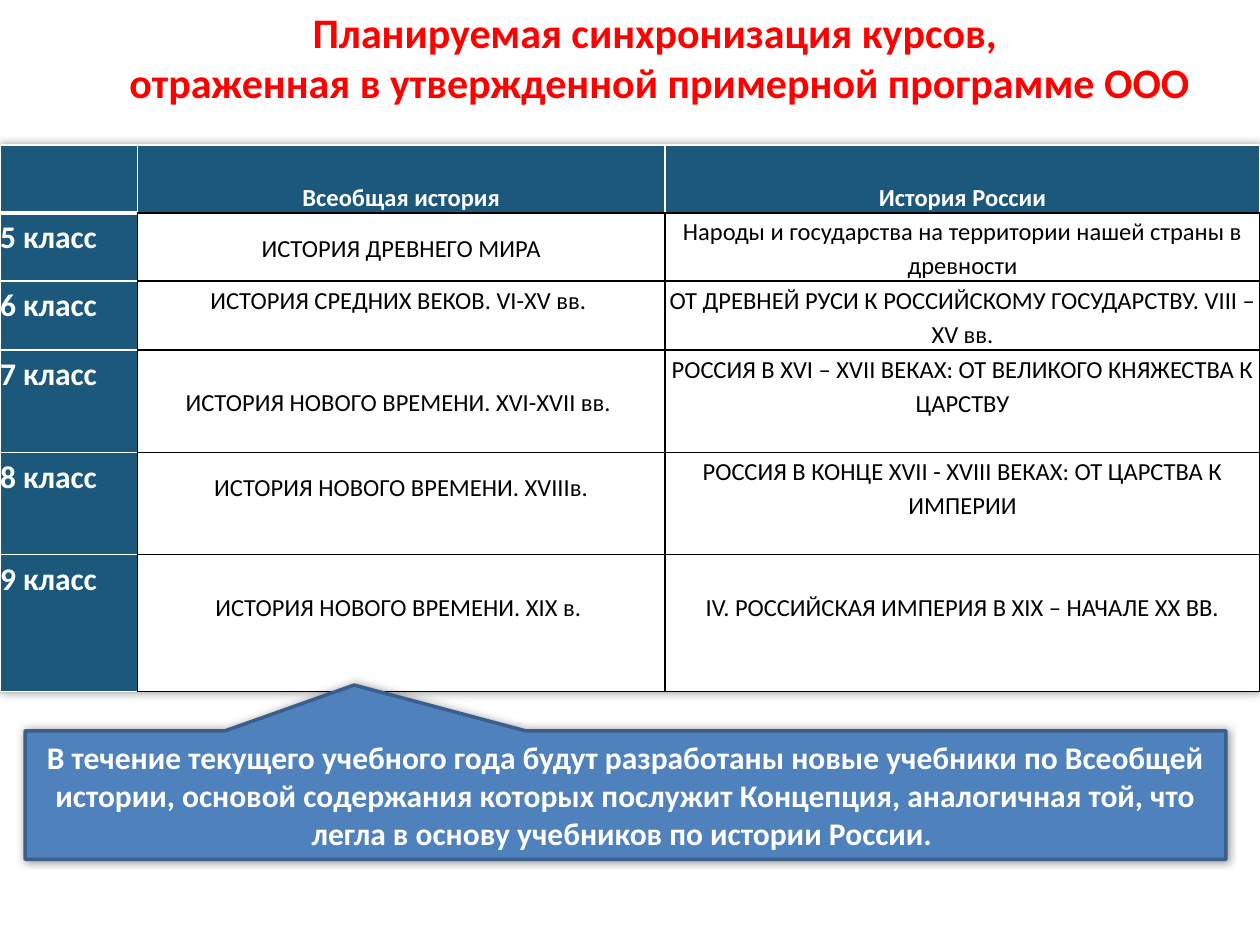
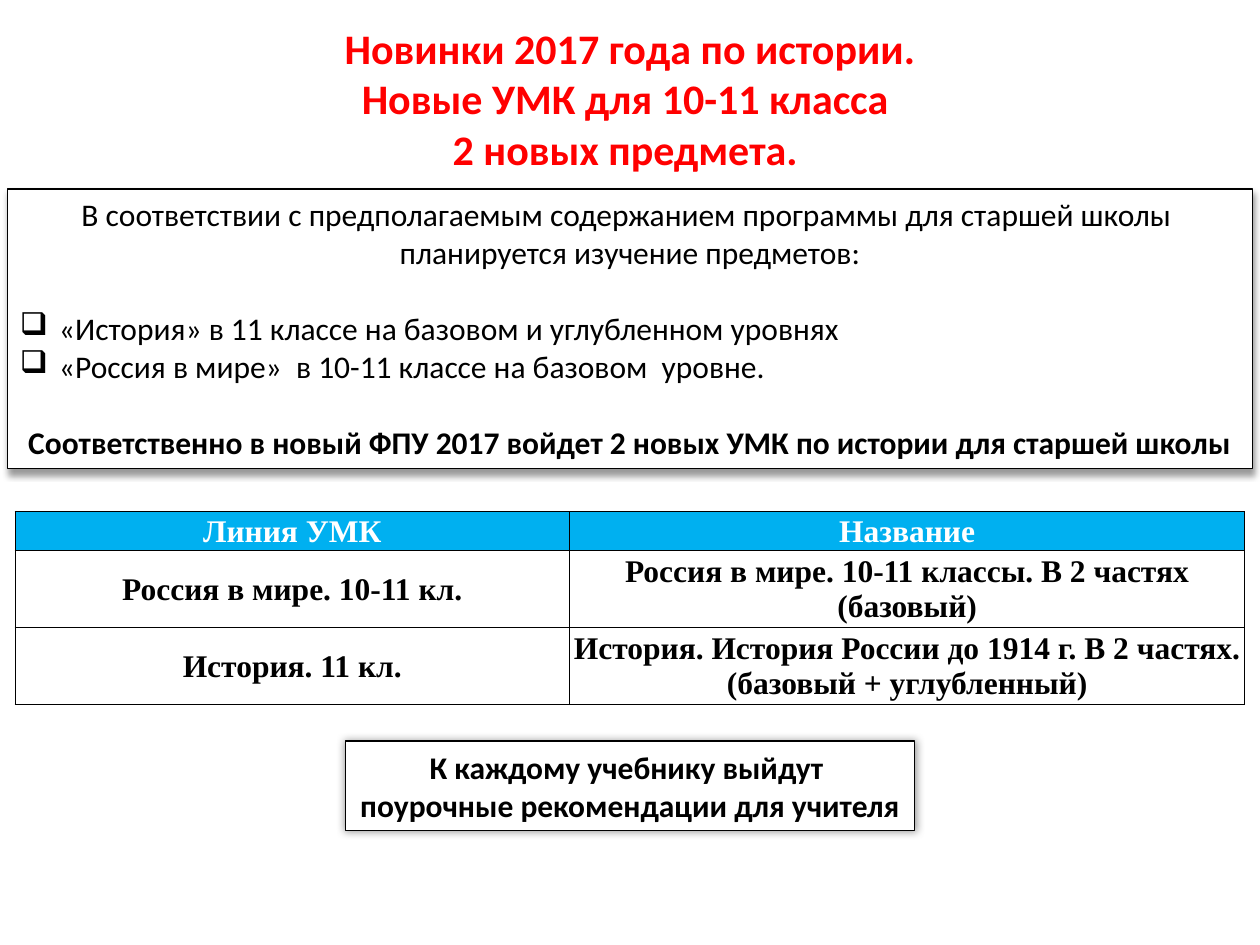
import pptx
import pptx.util
from lxml import etree
from pptx.dml.color import RGBColor
from pptx.enum.shapes import MSO_SHAPE
from pptx.enum.text import MSO_ANCHOR, PP_ALIGN
from pptx.oxml.ns import qn
from pptx.util import Inches, Pt

RED = RGBColor(0xFF, 0x00, 0x00)
BLACK = RGBColor(0x00, 0x00, 0x00)
WHITE = RGBColor(0xFF, 0xFF, 0xFF)
NAVY = RGBColor(0x1B, 0x58, 0x7C)
BLUE = RGBColor(0x4F, 0x81, 0xBD)
BLUE_EDGE = RGBColor(0x3A, 0x5F, 0x8C)
CYAN = RGBColor(0x00, 0xB0, 0xF0)

FONT = "Calibri"
TABLE_FONT = "Times New Roman"
BLANK_LINE_14 = 0.27  # inches taken by one 14 pt line at 1.15 spacing
BLANK_LINE_18 = Pt(22)

# Class, world history, Russian history; True leaves a free line below the text
COURSES = [
    ("5 класс", ("ИСТОРИЯ ДРЕВНЕГО МИРА", False),
     ("Народы и государства на территории нашей страны в древности", False)),
    ("6 класс", ("ИСТОРИЯ СРЕДНИХ ВЕКОВ. VI-XV вв. ", True),
     ("ОТ ДРЕВНЕЙ РУСИ К РОССИЙСКОМУ ГОСУДАРСТВУ. VIII –XV вв.", False)),
    ("7 класс", ("ИСТОРИЯ НОВОГО ВРЕМЕНИ. XVI-XVII вв. ", False),
     ("РОССИЯ В XVI – XVII ВЕКАХ: ОТ ВЕЛИКОГО КНЯЖЕСТВА К ЦАРСТВУ", True)),
    ("8 класс", ("ИСТОРИЯ НОВОГО ВРЕМЕНИ. XVIIIв.", True),
     ("РОССИЯ В КОНЦЕ XVII - XVIII ВЕКАХ: ОТ ЦАРСТВА К ИМПЕРИИ", True)),
    ("9 класс", ("ИСТОРИЯ НОВОГО ВРЕМЕНИ. XIX в. ", True),
     ("IV. РОССИЙСКАЯ ИМПЕРИЯ В XIX – НАЧАЛЕ XX ВВ.", True)),
]
TEXTBOOKS = [
    ("Линия УМК", "Название"),
    ("Россия в мире. 10-11 кл.", "Россия в мире. 10-11 классы. В 2 частях (базовый)"),
    ("История. 11 кл.",
     "История. История России до 1914 г. В 2 частях. (базовый + углубленный)"),
]


def write(tf, lines, size, color, bold=False, align=PP_ALIGN.CENTER, font=FONT, spacing=None):
    """Fill a text frame with one paragraph per line, all in one style."""
    tf.text = "\n".join(lines)
    for p in tf.paragraphs:
        p.alignment = align
        if spacing:
            p.line_spacing = spacing
        for r in p.runs:
            r.font.name, r.font.size, r.font.bold = font, Pt(size), bold
            r.font.color.rgb = color


def add_shadow(properties, index, blur, dist=0, direction=0):
    effects = etree.Element(qn("a:effectLst"))
    shadow = etree.SubElement(effects, qn("a:outerShdw"), blurRad=str(Pt(blur)),
                              dist=str(Pt(dist)), dir=str(direction * 60000),
                              algn="ctr", rotWithShape="0")
    color = etree.SubElement(shadow, qn("a:srgbClr"), val=str(BLACK))
    etree.SubElement(color, qn("a:alpha"), val="40000")
    properties.insert(index, effects)


def set_borders(cell, left, right, top, bottom):
    """Draw the four cell edges, each given as (colour, width in points)."""
    tc_pr = cell._tc.get_or_add_tcPr()
    edges = zip(("lnL", "lnR", "lnT", "lnB"), (left, right, top, bottom))
    for i, (tag, (color, width)) in enumerate(edges):
        ln = etree.Element(qn("a:" + tag), w=str(Pt(width)))
        fill = etree.SubElement(ln, qn("a:solidFill"))
        etree.SubElement(fill, qn("a:srgbClr"), val=str(color))
        tc_pr.insert(i, ln)


def set_bullet(p, char, indent):
    p_pr = p._p.get_or_add_pPr()
    p_pr.set("marL", str(Inches(indent)))
    p_pr.set("indent", str(-Inches(indent)))
    etree.SubElement(p_pr, qn("a:buChar"), char=char)


def style_cell(cell, fill, anchor, margins):
    cell.fill.solid()
    cell.fill.fore_color.rgb = fill
    cell.vertical_anchor = anchor
    (cell.margin_left, cell.margin_top,
     cell.margin_right, cell.margin_bottom) = (Inches(m) for m in margins)


def add_plain_table(slide, x, y, col_widths, row_heights):
    frame = slide.shapes.add_table(
        len(row_heights), len(col_widths), Inches(x), Inches(y),
        Inches(sum(col_widths)), Inches(sum(row_heights)))
    table = frame.table
    table.first_row = table.horz_banding = False
    for column, width in zip(table.columns, col_widths):
        column.width = Inches(width)
    for row, height in zip(table.rows, row_heights):
        row.height = Inches(height)
    return table


def add_title(slide, x, y, w, h, lines):
    tf = slide.shapes.add_textbox(Inches(x), Inches(y), Inches(w), Inches(h)).text_frame
    tf.word_wrap = True
    write(tf, lines, 24, RED, bold=True)


def add_box(slide, kind, x, y, w, h, fill, line, line_width, **shadow):
    sp = slide.shapes.add_shape(kind, Inches(x), Inches(y), Inches(w), Inches(h))
    sp.fill.solid()
    sp.fill.fore_color.rgb = fill
    sp.line.color.rgb = line
    sp.line.width = Pt(line_width)
    properties = sp._element.spPr
    add_shadow(properties, len(properties), **shadow)
    sp.text_frame.word_wrap = True
    sp.text_frame.vertical_anchor = MSO_ANCHOR.MIDDLE
    return sp


def add_course_table(slide, x, y):
    table = add_plain_table(slide, x, y, (1.09, 4.19, 4.72),
                            (0.54, 0.54, 0.55, 0.81, 0.81, 1.09))
    add_shadow(table._tbl.tblPr, 0, blur=5)
    white, thick, black = (WHITE, 1), (WHITE, 3), (BLACK, 1)

    for col, heading in enumerate(("", "Всеобщая история", "История России")):
        cell = table.cell(0, col)
        style_cell(cell, NAVY, MSO_ANCHOR.BOTTOM, (0, 0, 0, 0))
        set_borders(cell, white, white, white, black if heading else thick)
        if heading:
            write(cell.text_frame, [heading], 14, WHITE, bold=True, spacing=1.15)

    for row, (grade, *courses) in enumerate(COURSES, start=1):
        cell = table.cell(row, 0)
        style_cell(cell, NAVY, MSO_ANCHOR.TOP, (0, 0, 0, 0))
        set_borders(cell, white, black, thick if row == 1 else white, white)
        write(cell.text_frame, [grade], 18, WHITE, bold=True,
              align=PP_ALIGN.LEFT, spacing=1.15)
        for col, (course, free_line) in enumerate(courses, start=1):
            cell = table.cell(row, col)
            bottom = BLANK_LINE_14 if free_line else 0
            style_cell(cell, WHITE, MSO_ANCHOR.MIDDLE, (0, 0, 0, bottom))
            set_borders(cell, black, black, black, black)
            write(cell.text_frame, [course], 14, BLACK, spacing=1.15)


def add_textbook_callout(slide, x, y, w, h):
    sp = add_box(slide, MSO_SHAPE.RECTANGULAR_CALLOUT, x, y, w, h, BLUE, BLUE_EDGE, 2, blur=5)
    sp.adjustments[0], sp.adjustments[1] = -0.226, -0.856
    write(sp.text_frame, [
        "В течение текущего учебного года будут разработаны новые учебники по Всеобщей "
        "истории, основой содержания которых послужит Концепция, аналогичная той, что "
        "легла в основу учебников по истории России. "], 18, WHITE, bold=True)


def add_subjects_box(slide, x, y, w, h):
    sp = add_box(slide, MSO_SHAPE.RECTANGLE, x, y, w, h, WHITE, BLACK, 0.75,
                 blur=4, dist=3, direction=90)
    tf = sp.text_frame
    tf.vertical_anchor = MSO_ANCHOR.TOP
    write(tf, [
        "В соответствии с предполагаемым содержанием программы для старшей школы ",
        "планируется изучение предметов:",
        "«История» в 11 классе на базовом и углубленном уровнях",
        "«Россия в мире»  в 10-11 классе на базовом  уровне.",
        "Соответственно в новый ФПУ 2017 войдет 2 новых УМК по истории для старшей школы",
    ], 18, BLACK)
    subjects, conclusion = tf.paragraphs[2:4], tf.paragraphs[4]
    for p in (subjects[0], conclusion):
        p.space_before = BLANK_LINE_18
    for p in subjects:
        p.alignment = PP_ALIGN.LEFT
        set_bullet(p, "❑", 0.31)
    conclusion.runs[0].font.bold = True


def add_textbook_table(slide, x, y):
    table = add_plain_table(slide, x, y, (4.4, 5.36), (0.31, 0.6, 0.61))
    edge = (BLACK, 0.5)
    for row, texts in enumerate(TEXTBOOKS):
        fill, color = (WHITE, BLACK) if row else (CYAN, WHITE)
        for col, text in enumerate(texts):
            cell = table.cell(row, col)
            style_cell(cell, fill, MSO_ANCHOR.MIDDLE, (0.01, 0.01, 0.01, 0))
            set_borders(cell, edge, edge, edge, edge)
            write(cell.text_frame, [text], 18, color, bold=True, font=TABLE_FONT)


def add_teacher_note(slide, x, y, w, h):
    sp = add_box(slide, MSO_SHAPE.RECTANGLE, x, y, w, h, WHITE, BLACK, 0.75, blur=5)
    sp.text_frame.word_wrap = False
    write(sp.text_frame, ["К каждому учебнику выйдут ", "поурочные рекомендации для учителя"],
          18, BLACK, bold=True)


def build_courses_slide(slide):
    add_title(slide, 0.67, 0, 9.13, 0.93, [
        "Планируемая синхронизация курсов, ",
        "отраженная в утвержденной примерной программе ООО"])
    add_course_table(slide, 0, 1.15)
    add_textbook_callout(slide, 0.2, 5.8, 9.53, 1.02)


def build_novelties_slide(slide):
    add_title(slide, 0.5, 0.13, 9, 0.77, [
        "Новинки 2017 года по истории.",
        "Новые УМК для 10-11 класса ",
        "2 новых предмета. "])
    add_subjects_box(slide, 0.06, 1.5, 9.88, 2.22)
    add_teacher_note(slide, 2.74, 5.88, 4.52, 0.71)
    add_textbook_table(slide, 0.12, 4.06)


def main():
    prs = pptx.Presentation()
    prs.slide_width, prs.slide_height = Inches(10), Inches(7.5)
    for build in (build_courses_slide, build_novelties_slide):
        build(prs.slides.add_slide(prs.slide_layouts[6]))
    prs.save("out.pptx")


if __name__ == "__main__":
    main()
